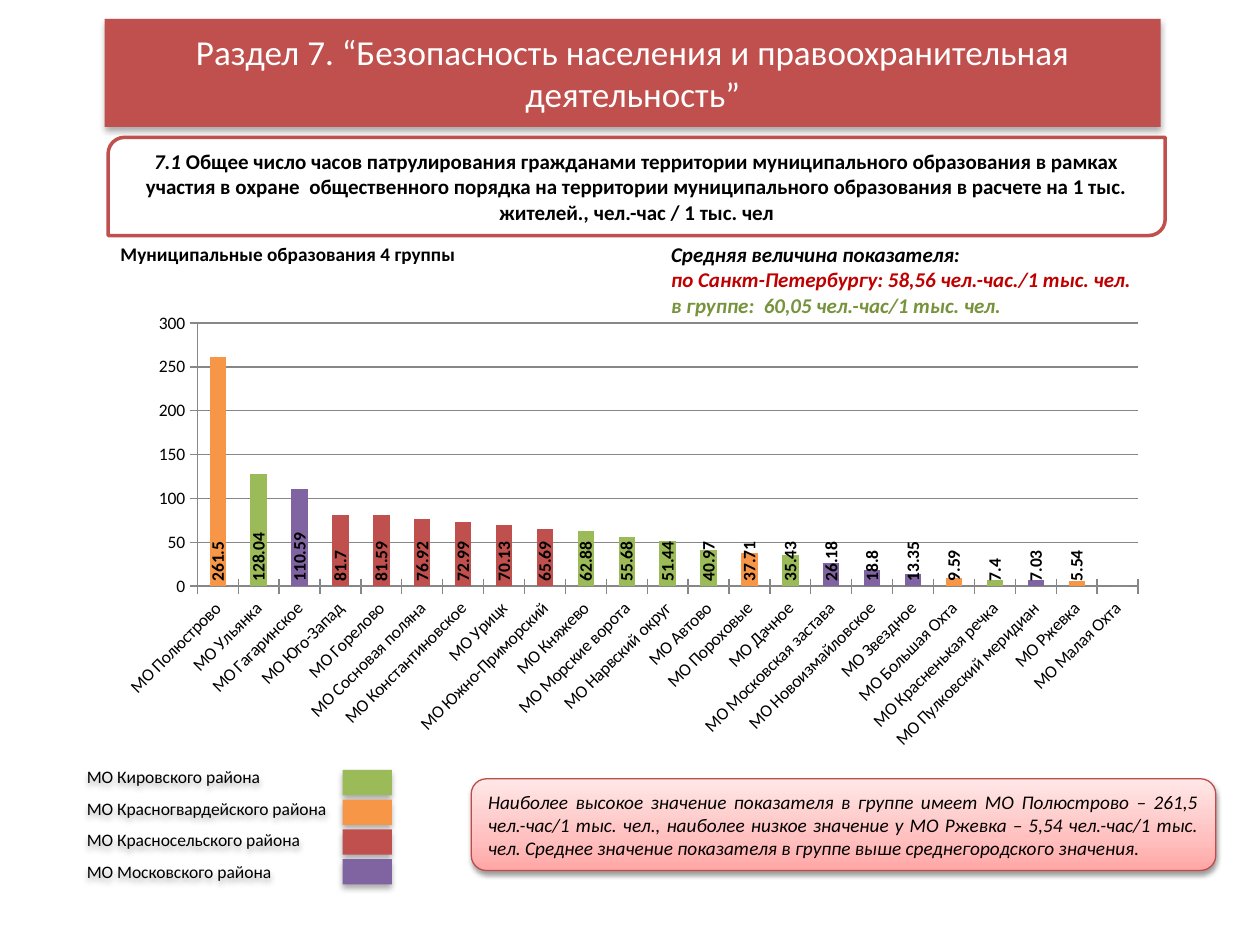
from lxml import etree
from pptx import Presentation
from pptx.chart.data import CategoryChartData
from pptx.dml.color import RGBColor
from pptx.enum.chart import XL_CHART_TYPE as ChartType, XL_LABEL_POSITION as LabelPosition
from pptx.enum.chart import XL_TICK_MARK as TickMark
from pptx.enum.shapes import MSO_SHAPE as Preset
from pptx.enum.text import MSO_ANCHOR as Anchor, MSO_AUTO_SIZE as AutoSize, PP_ALIGN as Align
from pptx.oxml import parse_xml
from pptx.oxml.ns import nsdecls, qn
from pptx.util import Cm, Pt

COLORS = {
    "black": "000000", "white": "FFFFFF", "axis": "878787",
    "green": "9BBB59", "orange": "F79646", "red": "C0504D", "purple": "8064A2",
    "city": "C00000", "group": "77933C", "note_line": "BF4C48",
    "note_bottom": "FFA6A5", "note_middle": "FFC0BF", "note_top": "FFE7E7",
}
RGB = {name: RGBColor.from_string(value) for name, value in COLORS.items()}


def write(shape, paragraphs, align=Align.LEFT, color="black", **formats):
    """Fill a shape with paragraphs, each a list of (text, run formats)."""
    frame = shape.text_frame
    for index, runs in enumerate(paragraphs):
        paragraph = frame.add_paragraph() if index else frame.paragraphs[0]
        paragraph.alignment = align
        for text, extra in runs:
            run = paragraph.add_run()
            run.text = text
            values = {"name": "Calibri", "color": color, **formats, **extra}
            run.font.color.rgb = RGB[values.pop("color")]
            for key, value in values.items():
                setattr(run.font, key, value)
    return frame


def add_shadow(shape, blur=3.5, distance=2.2, alpha=32):
    """Give a shape a soft black shadow straight below it."""
    shape.shadow.inherit = False
    shape._element.spPr.find(qn("a:effectLst")).append(parse_xml(
        f'<a:outerShdw {nsdecls("a")} blurRad="{Pt(blur)}" dist="{Pt(distance)}" '
        f'dir="5400000" rotWithShape="0"><a:srgbClr val="{COLORS["black"]}">'
        f'<a:alpha val="{alpha * 1000}"/></a:srgbClr></a:outerShdw>'))


presentation = Presentation()
presentation.slide_width, presentation.slide_height = Cm(25.4), Cm(19.05)
slide = presentation.slides.add_slide(presentation.slide_layouts[5])
shapes = slide.shapes

# Title banner
title = shapes.title
title.left, title.top, title.width, title.height = Cm(2.11), Cm(0.38), Cm(21.29), Cm(2.18)
title._element.spPr.append(parse_xml(
    f'<a:prstGeom {nsdecls("a")} prst="roundRect"><a:avLst/></a:prstGeom>'))
title.fill.solid()
title.fill.fore_color.rgb = RGB["red"]
add_shadow(title)
frame = write(title, [[("Раздел 7. “Безопасность населения и правоохранительная деятельность”", {})]],
              Align.CENTER, "white", size=Pt(20))
frame.auto_size, frame.vertical_anchor = AutoSize.NONE, Anchor.MIDDLE

# Group heading and average values
heading = shapes.add_textbox(Cm(2.18), Cm(4.75), Cm(7.54), Cm(0.74))
heading.text_frame.word_wrap = True
write(heading, [[("Муниципальные образования 4 группы", {})]], size=Pt(11), bold=True)

averages = shapes.add_textbox(Cm(13.28), Cm(4.75), Cm(10.01), Cm(1.8))
averages.text_frame.word_wrap = False
write(averages, [
    [("Средняя величина показателя:", {})],
    [("по Санкт-Петербургу: 58,56 чел.-час./1 тыс. чел.", {"color": "city"})],
    [("в группе:  60,05 чел.-час/1 тыс. чел.", {"color": "group"})],
], size=Pt(12), bold=True, italic=True)

# Indicator name
indicator = shapes.add_shape(Preset.ROUND_2_DIAG_RECTANGLE, Cm(2.18), Cm(2.77), Cm(21.31), Cm(1.98))
indicator.shadow.inherit = False
indicator.fill.solid()
indicator.fill.fore_color.rgb = RGB["white"]
indicator.line.color.rgb = RGB["red"]
indicator.line.width = Pt(2)
write(indicator, [[
    ("7.1 ", {"italic": True}),
    ("Общее число часов патрулирования гражданами территории муниципального образования "
     "в рамках участия в охране  общественного порядка на территории муниципального "
     "образования в расчете на 1 тыс. жителей", {}),
    ("., ", {"italic": True}),
    ("чел.-час / 1 тыс. чел", {}),
]], Align.CENTER, size=Pt(12), bold=True)

# District legend
districts = {
    "МО Кировского района": "green",
    "МО Красногвардейского района": "orange",
    "МО Красносельского района": "red",
    "МО Московского района": "purple",
}
legend = shapes.add_textbox(Cm(1.5), Cm(15.32), Cm(7.21), Cm(2.62))
legend.text_frame.word_wrap = True
add_shadow(legend)
frame = write(legend, [[(name, {})] for name in districts], size=Pt(10))
for paragraph in frame.paragraphs:
    paragraph.space_after = Pt(6)
for row, color in enumerate(districts.values()):
    swatch = shapes.add_shape(Preset.RECTANGLE, Cm(6.91), Cm(15.52 + 0.6 * row), Cm(0.99), Cm(0.51))
    swatch.fill.solid()
    swatch.fill.fore_color.rgb = RGB[color]
    swatch.line.fill.background()
    add_shadow(swatch)

# Conclusion
note = shapes.add_shape(Preset.ROUNDED_RECTANGLE, Cm(9.5), Cm(15.7), Cm(15.01), Cm(1.85))
stops = "".join(
    f'<a:gs pos="{position * 1000}"><a:srgbClr val="{COLORS[color]}"/></a:gs>'
    for position, color in ((0, "note_bottom"), (35, "note_middle"), (100, "note_top")))
note._element.spPr.append(parse_xml(
    f'<a:gradFill {nsdecls("a")} rotWithShape="1"><a:gsLst>{stops}</a:gsLst>'
    '<a:lin ang="16200000" scaled="1"/></a:gradFill>'))
note.line.color.rgb = RGB["note_line"]
note.line.width = Pt(0.75)
add_shadow(note, 3.1, 1.6, 38)
write(note, [[(
    "Наиболее высокое значение показателя в группе имеет МО Полюстрово – 261,5 чел.-час/1 тыс. "
    "чел., наиболее низкое значение у МО Ржевка – 5,54 чел.-час/1 тыс. чел. Среднее значение "
    "показателя в группе выше среднегородского значения.", {})]],
    Align.JUSTIFY, size=Pt(11), italic=True)

# Patrol hours by municipality, coloured by district
hours = [
    ("МО Полюстрово", 261.5, "orange"), ("МО Ульянка", 128.04, "green"),
    ("МО Гагаринское", 110.59, "purple"), ("МО Юго-Запад", 81.7, "red"),
    ("МО Горелово", 81.59, "red"), ("МО Сосновая поляна", 76.92, "red"),
    ("МО Константиновское", 72.99, "red"), ("МО Урицк", 70.13, "red"),
    ("МО Южно-Приморский", 65.69, "red"), ("МО Княжево", 62.88, "green"),
    ("МО Морские ворота", 55.68, "green"), ("МО Нарвский округ", 51.44, "green"),
    ("МО Автово", 40.97, "green"), ("МО Пороховые", 37.71, "orange"),
    ("МО Дачное", 35.43, "green"), ("МО Московская застава", 26.18, "purple"),
    ("МО Новоизмайловское", 18.8, "purple"), ("МО Звездное", 13.35, "purple"),
    ("МО Большая Охта", 9.59, "orange"), ("МО Красненькая речка", 7.4, "green"),
    ("МО Пулковский меридиан", 7.03, "purple"), ("МО Ржевка", 5.54, "orange"),
    ("МО Малая Охта", 0, "green"),
]
chart_data = CategoryChartData()
chart_data.categories = [name for name, _, _ in hours]
chart_data.add_series("Series 1", [value for _, value, _ in hours])
chart = shapes.add_chart(ChartType.COLUMN_CLUSTERED, Cm(2.06), Cm(6.15), Cm(21.31), Cm(9.14),
                         chart_data).chart
chart.has_title = chart.has_legend = False
chart.font.name, chart.font.size = "Calibri", Pt(10)
chart.font.color.rgb = RGB["black"]

plot = chart.plots[0]
plot.gap_width, plot.vary_by_categories = 150, False
series = plot.series[0]
series.format.fill.solid()
series.format.fill.fore_color.rgb = RGB["green"]
for index, (_, _, color) in enumerate(hours):
    if color != "green":
        fill = series.points[index].format.fill
        fill.solid()
        fill.fore_color.rgb = RGB[color]

# Upright value labels, none on the empty last column
labels = series.data_labels
labels.show_value, labels.position = True, LabelPosition.INSIDE_BASE
labels.font.bold, labels.font.size, labels.font.name = True, Pt(10), "Calibri"
labels.font.color.rgb = RGB["black"]
labels._element.find(qn("c:txPr")).find(qn("a:bodyPr")).set("rot", "-5400000")
labels._element.insert(0, parse_xml(
    f'<c:dLbl {nsdecls("c")}><c:idx val="{len(hours) - 1}"/><c:delete val="1"/></c:dLbl>'))

# Axes and plot position
for axis in (chart.category_axis, chart.value_axis):
    axis.major_tick_mark, axis.minor_tick_mark = TickMark.CROSS, TickMark.NONE
    axis.format.line.color.rgb = RGB["axis"]
    axis.tick_labels.font.size = Pt(10)
chart.category_axis._element.find(qn("c:txPr")).find(qn("a:bodyPr")).set("rot", "-2700000")
value_axis = chart.value_axis
value_axis.minimum_scale, value_axis.maximum_scale, value_axis.major_unit = 0, 300, 50
value_axis.major_gridlines.format.line.color.rgb = RGB["axis"]

plot_area = chart._chartSpace.chart.plotArea
for layout in plot_area.findall(qn("c:layout")):
    plot_area.remove(layout)
layout = parse_xml(f'<c:layout {nsdecls("c")}><c:manualLayout/></c:layout>')
for tag, value in (("layoutTarget", "inner"), ("xMode", "edge"), ("yMode", "edge"),
                   ("x", 0.09), ("y", 0.04), ("w", 0.89), ("h", 0.58)):
    etree.SubElement(layout[0], qn(f"c:{tag}")).set("val", str(value))
plot_area.insert(0, layout)

presentation.save("out.pptx")
